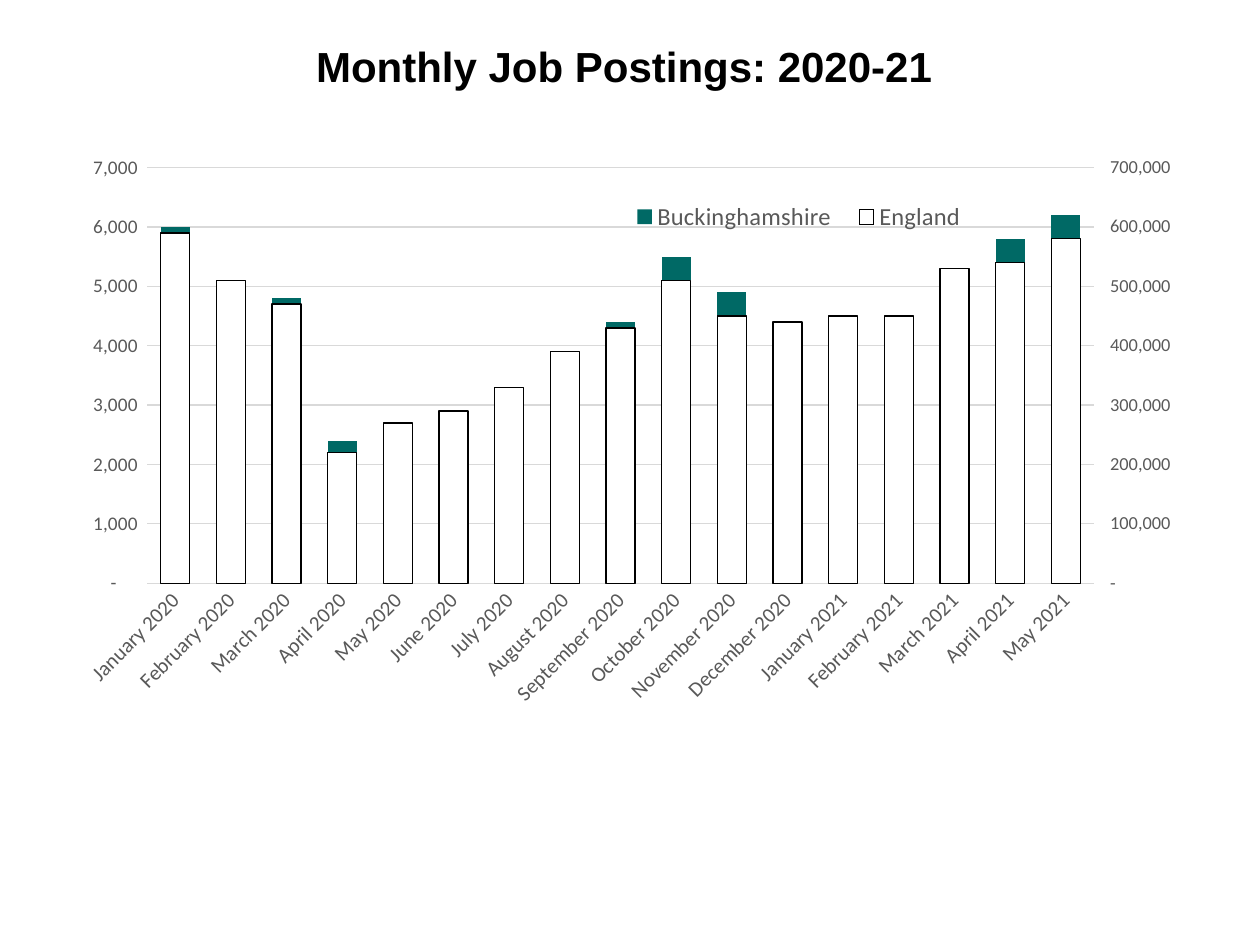
from copy import deepcopy
from dataclasses import dataclass

from lxml.etree import SubElement
from pptx import Presentation
from pptx.chart.axis import ValueAxis
from pptx.chart.data import CategoryChartData
from pptx.dml.color import RGBColor as RGB
from pptx.enum.chart import XL_CHART_TYPE as CHART, XL_LEGEND_POSITION as LEGEND, XL_TICK_MARK as TICK
from pptx.enum.text import MSO_ANCHOR as ANCHOR, PP_ALIGN as ALIGN
from pptx.oxml.ns import qn
from pptx.util import Inches, Pt


@dataclass(frozen=True)
class Theme:
    """Colours, fonts and type sizes of the slide."""
    black: RGB = RGB(0, 0, 0)
    white: RGB = RGB(255, 255, 255)
    teal: RGB = RGB(0x00, 0x69, 0x65)
    grey: RGB = RGB(0x59, 0x59, 0x59)
    grid: RGB = RGB(0xD9, 0xD9, 0xD9)
    title_font: str = "Arial"
    chart_font: str = "Calibri"
    title: float = 24
    legend: float = 14
    months: float = 12
    left_axis: float = 11
    right_axis: float = 10.5
    base: float = 10
    line: float = 0.75


THEME = Theme()
CHART_WIDTH, CHART_HEIGHT = 9, 4.95
NUMBER_FORMAT = '_-* #,##0_-;\\-* #,##0_-;_-* "-"??_-;_-@_-'
MONTHS = ("January February March April May June July August September "
          "October November December").split()
CATEGORIES = [f"{m} 2020" for m in MONTHS] + [f"{m} 2021" for m in MONTHS[:5]]
BUCKINGHAMSHIRE = [6000, 5000, 4800, 2400, 2500, 2700, 3300, 3700, 4400,
                   5500, 4900, 4000, 4500, 4500, 5300, 5800, 6200]
ENGLAND = [590000, 510000, 470000, 220000, 270000, 290000, 330000, 390000, 430000,
           510000, 450000, 440000, 450000, 450000, 530000, 540000, 580000]


def style_font(font, name, size, color, bold=False):
    """Set the face, size and colour of a font."""
    font.name, font.size, font.bold = name, Pt(size), bold
    font.color.rgb = color


def style_line(line, color):
    """Give a line its colour and the common width."""
    line.color.rgb = color
    line.width = Pt(THEME.line)


def add_title(s, text):
    """Fill and place the title placeholder."""
    sp = s.shapes.title
    sp.left, sp.top, sp.width, sp.height = map(Inches, (0.5, -0.11, 9, 1.26))
    tf = sp.text_frame
    tf.vertical_anchor = ANCHOR.MIDDLE
    p = tf.paragraphs[0]
    p.alignment = ALIGN.CENTER
    r = p.add_run()
    r.text = text
    style_font(r.font, THEME.title_font, THEME.title, THEME.black, True)


def set_layout(element, x, y, w, h, inner=False):
    """Place a chart part by inches from the corner of the chart."""
    layout = element.find(qn("c:layout"))
    if layout is None:
        layout = SubElement(element, qn("c:layout"))
        anchor = element.find(qn("c:legendPos"))
        if anchor is None:
            element.insert(0, layout)
        else:
            anchor.addnext(layout)
    manual = SubElement(layout, qn("c:manualLayout"))
    values = {"layoutTarget": "inner"} if inner else {}
    values |= {"xMode": "edge", "yMode": "edge", "x": x / CHART_WIDTH, "y": y / CHART_HEIGHT,
               "w": w / CHART_WIDTH, "h": h / CHART_HEIGHT}
    for tag, value in values.items():
        SubElement(manual, qn(f"c:{tag}")).set("val", str(value))


def style_value_axis(axis, maximum, size, tick):
    """Format a value axis that runs in seven steps from zero."""
    axis.minimum_scale, axis.maximum_scale = 0, maximum
    axis.major_unit = maximum / 7
    axis.major_tick_mark, axis.minor_tick_mark = tick, TICK.NONE
    axis.format.line.fill.background()
    labels = axis.tick_labels
    labels.number_format, labels.number_format_is_linked = NUMBER_FORMAT, False
    style_font(labels.font, THEME.chart_font, size, THEME.grey)


def style_category_axis(axis):
    """Format the month axis with slanted labels."""
    axis.major_tick_mark = axis.minor_tick_mark = TICK.NONE
    style_line(axis.format.line, THEME.grid)
    style_font(axis.tick_labels.font, THEME.chart_font, THEME.months, THEME.grey)
    body = axis._element.find(qn("c:txPr")).find(qn("a:bodyPr"))
    body.set("rot", "-2700000")
    body.set("vert", "horz")


def move_last_series_right(chart):
    """Move the last series to a second axis and return that axis."""
    area = chart._chartSpace.chart.plotArea
    bars, cat, val = (area.find(qn(f"c:{tag}")) for tag in ("barChart", "catAx", "valAx"))
    bars2, cat2, val2 = map(deepcopy, (bars, cat, val))
    bars.remove(bars.findall(qn("c:ser"))[-1])
    for ser in bars2.findall(qn("c:ser"))[:-1]:
        bars2.remove(ser)
    bars.addnext(bars2)
    val.addnext(val2)
    val2.addnext(cat2)
    ids = {ax.find(qn("c:axId")).get("val"): new for ax, new in ((cat, "5001"), (val, "5002"))}
    for element in (bars2, cat2, val2):
        for ref in element.findall(qn("c:axId")) + element.findall(qn("c:crossAx")):
            ref.set("val", ids[ref.get("val")])
    cat2.find(qn("c:delete")).set("val", "1")
    val2.find(qn("c:axPos")).set("val", "r")
    val2.find(qn("c:crosses")).set("val", "max")
    axis = ValueAxis(val2)
    axis.has_major_gridlines = False
    return axis


def add_postings_chart(s):
    """Add the column chart with one axis for each area."""
    data = CategoryChartData()
    data.categories = CATEGORIES
    data.add_series("Buckinghamshire", BUCKINGHAMSHIRE)
    data.add_series("England", ENGLAND)
    box = map(Inches, (0.5, 1.14, CHART_WIDTH, CHART_HEIGHT))
    chart = s.shapes.add_chart(CHART.COLUMN_CLUSTERED, *box, data).chart
    chart.has_title = False
    style_font(chart.font, THEME.chart_font, THEME.base, THEME.black)
    chart.plots[0].gap_width = 91
    chart.plots[0].vary_by_categories = False

    style_category_axis(chart.category_axis)
    axis = chart.value_axis
    axis.has_major_gridlines = True
    style_line(axis.major_gridlines.format.line, THEME.grid)
    style_value_axis(axis, 7000, THEME.left_axis, TICK.NONE)
    right = move_last_series_right(chart)
    style_value_axis(right, 700000, THEME.right_axis, TICK.OUTSIDE)

    for plot, color in zip(chart.plots, (THEME.teal, THEME.white)):
        series = plot.series[0]
        series.invert_if_negative = False
        series.format.fill.solid()
        series.format.fill.fore_color.rgb = color
    style_line(chart.plots[1].series[0].format.line, THEME.black)

    chart.has_legend = True
    legend = chart.legend
    legend.position, legend.include_in_layout = LEGEND.BOTTOM, True
    style_font(legend.font, THEME.chart_font, THEME.legend, THEME.grey)
    set_layout(legend._element, 4.4, 0.35, 2.88, 0.46)
    set_layout(chart._chartSpace.chart.plotArea, 0.67, 0.19, 7.51, 3.3, inner=True)


def main():
    """Build and save the slide."""
    prs = Presentation()
    prs.slide_width, prs.slide_height = Inches(10), Inches(7.5)
    s = prs.slides.add_slide(prs.slide_layouts[5])
    add_title(s, "Monthly Job Postings: 2020-21 ")
    add_postings_chart(s)
    prs.save("out.pptx")


if __name__ == "__main__":
    main()
